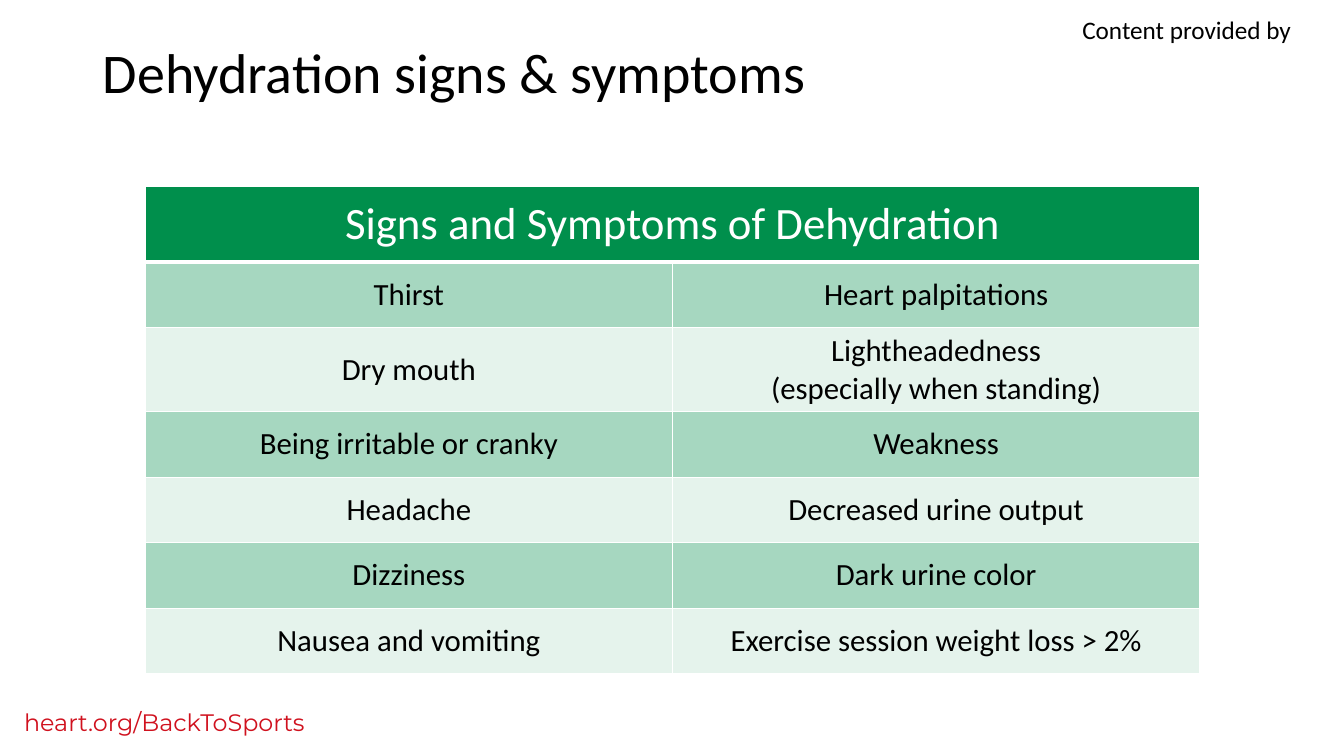
from lxml import etree
from pptx import Presentation
from pptx.dml.color import RGBColor
from pptx.enum import text
from pptx.oxml import ns
from pptx.util import Inches, Pt

TITLE = "Dehydration signs & symptoms"
CREDIT = "Content provided by"
ADDRESS = "heart.org/BackToSports"
HEADING = "Signs and Symptoms of Dehydration"
SYMPTOMS = [
    ("Thirst", "Heart palpitations"),
    ("Dry mouth", "Lightheadedness\n(especially when standing)"),
    ("Being irritable or cranky", "Weakness"),
    ("Headache", "Decreased urine output"),
    ("Dizziness", "Dark urine color"),
    ("Nausea and vomiting", "Exercise session weight loss > 2%"),
]

GREEN = RGBColor(0x00, 0x8F, 0x4C)
RED = RGBColor(0xD0, 0x11, 0x1E)
BLACK = RGBColor(0, 0, 0)
WHITE = RGBColor(0xFF, 0xFF, 0xFF)

HEADER_HEIGHT, ROW_HEIGHT, COLUMN_WIDTH = 0.75, 0.65, 5.23
BAND_OPACITIES = (35, 10)


def write_text(frame, content, size, color=BLACK, font="Calibri",
               align=text.PP_ALIGN.CENTER, line_spacing=None):
    frame.text = content
    for paragraph in frame.paragraphs:
        paragraph.alignment = align
        paragraph.line_spacing = line_spacing
        for run in paragraph.runs:
            run.font.size = Pt(size)
            run.font.name = font
            run.font.color.rgb = color


def add_label(slide, box, content, **text_format):
    label = slide.shapes.add_textbox(*map(Inches, box))
    label.text_frame.word_wrap = True
    write_text(label.text_frame, content, **text_format)


def style_cell(cell, opacity=100, bottom_width=1):
    """Give the cell white borders and a green fill of the given opacity in percent."""
    cell.vertical_anchor = text.MSO_ANCHOR.MIDDLE
    properties = cell._tc.get_or_add_tcPr()
    for side in "LRTB":
        width = bottom_width if side == "B" else 1
        line = etree.SubElement(properties, ns.qn(f"a:ln{side}"), w=str(Pt(width)))
        line_fill = etree.SubElement(line, ns.qn("a:solidFill"))
        etree.SubElement(line_fill, ns.qn("a:srgbClr"), val=str(WHITE))
    cell.fill.solid()
    cell.fill.fore_color.rgb = GREEN
    if opacity < 100:
        color = properties.find(ns.qn("a:solidFill")).find(ns.qn("a:srgbClr"))
        etree.SubElement(color, ns.qn("a:alpha"), val=str(opacity * 1000))


def add_symptom_table(slide):
    height = HEADER_HEIGHT + ROW_HEIGHT * len(SYMPTOMS)
    table = slide.shapes.add_table(
        len(SYMPTOMS) + 1, 2, Inches(1.44), Inches(1.85),
        Inches(2 * COLUMN_WIDTH), Inches(height)).table
    for column in table.columns:
        column.width = Inches(COLUMN_WIDTH)
    for index, row in enumerate(table.rows):
        row.height = Inches(ROW_HEIGHT if index else HEADER_HEIGHT)

    table.cell(0, 0).merge(table.cell(0, 1))
    for cell in table.rows[0].cells:
        style_cell(cell, bottom_width=3)
    write_text(table.cell(0, 0).text_frame, HEADING, size=32, color=WHITE)

    for row, symptoms in enumerate(SYMPTOMS, start=1):
        for column, symptom in enumerate(symptoms):
            cell = table.cell(row, column)
            style_cell(cell, BAND_OPACITIES[(row - 1) % 2])
            write_text(cell.text_frame, symptom, size=22)


def main():
    presentation = Presentation()
    presentation.slide_width = Inches(13.33)
    presentation.slide_height = Inches(7.5)
    slide = presentation.slides.add_slide(presentation.slide_layouts[5])

    add_label(slide, (0.14, 6.97, 4.33, 0.39), ADDRESS, size=17, color=RED,
              font="Montserrat", align=text.PP_ALIGN.LEFT)
    add_label(slide, (10.38, 0.09, 2.78, 0.4), CREDIT, size=18)

    title = slide.shapes.title
    title.left, title.top = Inches(0.92), Inches(0.4)
    title.width, title.height = Inches(9.61), Inches(0.83)
    title.text_frame.vertical_anchor = text.MSO_ANCHOR.TOP
    title.text_frame.auto_size = text.MSO_AUTO_SIZE.NONE
    write_text(title.text_frame, TITLE, size=40, align=text.PP_ALIGN.LEFT,
               line_spacing=0.9)

    add_symptom_table(slide)
    presentation.save("out.pptx")


if __name__ == "__main__":
    main()
